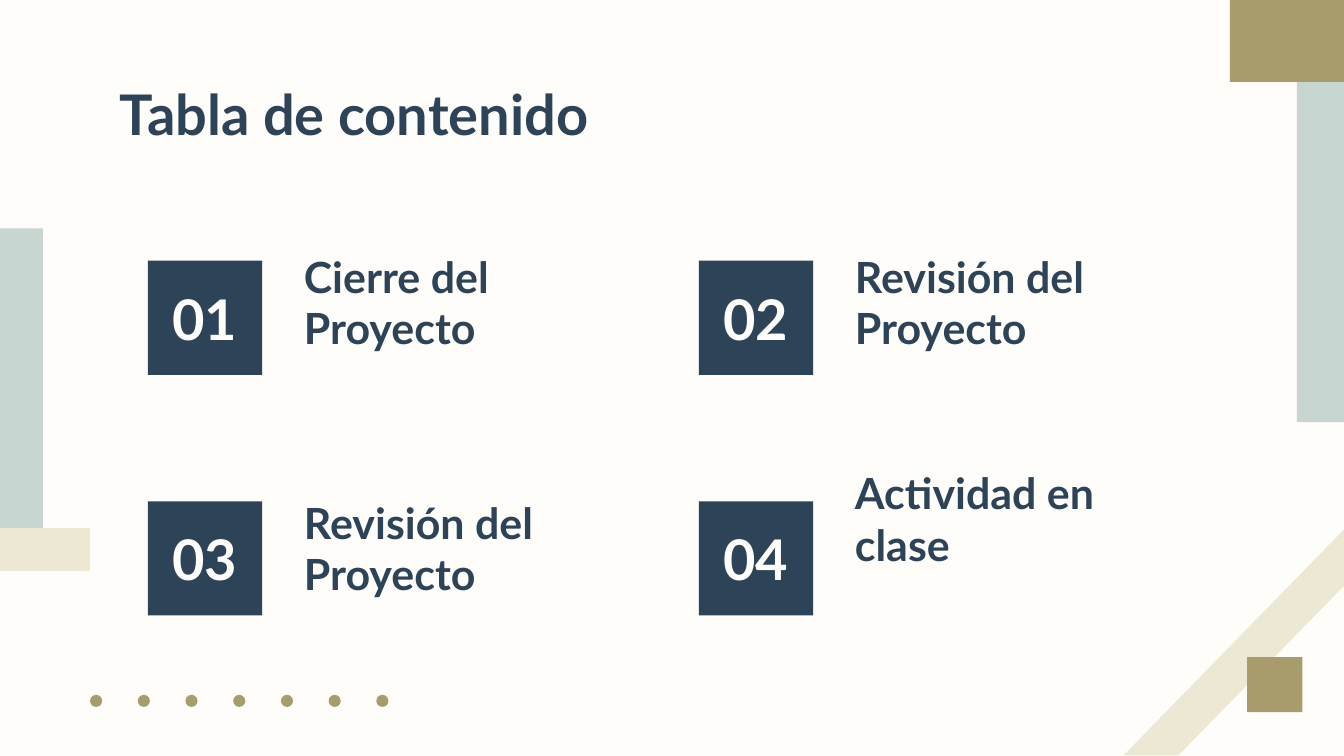
from dataclasses import dataclass

from pptx import Presentation
from pptx.dml.color import RGBColor
from pptx.enum.shapes import MSO_SHAPE
from pptx.enum.text import MSO_ANCHOR, MSO_AUTO_SIZE, PP_ALIGN
from pptx.util import Inches, Pt

RECTANGLE = MSO_SHAPE.RECTANGLE
OVAL = MSO_SHAPE.OVAL
RIGHT_TRIANGLE = MSO_SHAPE.RIGHT_TRIANGLE
TOP, MIDDLE, BOTTOM = MSO_ANCHOR.TOP, MSO_ANCHOR.MIDDLE, MSO_ANCHOR.BOTTOM
LEFT, CENTER = PP_ALIGN.LEFT, PP_ALIGN.CENTER
NO_AUTOFIT = MSO_AUTO_SIZE.NONE
TITLE_ONLY = 5

WIDTH = 10
HEIGHT = WIDTH * 9 / 16


@dataclass(frozen=True)
class Theme:
    paper: str = "FFFDFA"
    navy: str = "2C4358"
    gold: str = "A89C6C"
    sand: str = "ECE8D4"
    mist: str = "C7D6D1"
    font: str = "Lato"
    heading_size: int = 30
    label_size: int = 23
    inset: float = 0.1


THEME = Theme()

# Number, label, and how far the label's box sits above its tile
TOPICS = [
    ("01", "Cierre del Proyecto", 0.06),
    ("02", "Revisión del Proyecto", 0.06),
    ("03", "Revisión del Proyecto", 0.02),
    ("04", "Actividad en clase", 0.24),
]


def place(item, box):
    item.left, item.top, item.width, item.height = (Inches(n) for n in box)


def add_block(shapes, kind, box, color, rotation=0):
    block = shapes.add_shape(kind, *(Inches(n) for n in box))
    block.shadow.inherit = False
    block.fill.solid()
    block.fill.fore_color.rgb = RGBColor.from_string(color)
    block.line.fill.background()
    block.rotation = rotation
    return block


def write(shape, text, size, color, anchor, align=LEFT):
    frame = shape.text_frame
    frame.text = text
    frame.word_wrap = True
    frame.auto_size = NO_AUTOFIT
    frame.vertical_anchor = anchor
    frame.margin_left = frame.margin_right = Inches(THEME.inset)
    frame.margin_top = frame.margin_bottom = Inches(THEME.inset)
    para = frame.paragraphs[0]
    para.alignment = align
    para.font.name = THEME.font
    para.font.size = Pt(size)
    para.font.bold = True
    para.font.color.rgb = RGBColor.from_string(color)


def add_dots(shapes, box, count=7):
    left, top, width, size = box
    step = (width - size) / (count - 1)
    group = shapes.add_group_shape()
    for index in range(count):
        add_block(group.shapes, OVAL,
                  (left + index * step, top, size, size), THEME.gold)


def add_decoration(shapes):
    """Diagonal band, side bars, dots and corner squares."""
    bar, corner_width, corner_height = 0.35, 0.85, 0.61
    add_block(shapes, RIGHT_TRIANGLE, (8.34, 3.95, 1.69, 1.65), THEME.sand, 270)
    add_block(shapes, RECTANGLE,
              (WIDTH - bar, corner_height, bar, 0.45 * HEIGHT), THEME.mist)
    add_block(shapes, RECTANGLE, (0, 1.7, 0.32, 2.23), THEME.mist)
    add_block(shapes, RECTANGLE, (0, 3.93, 0.67, 0.32), THEME.sand)
    add_dots(shapes, (0.67, 5.17, 2.22, 0.09))
    add_block(shapes, RIGHT_TRIANGLE, (8.75, 4.36, 1.28, 1.25), THEME.paper, 270)
    add_block(shapes, RECTANGLE, (9.28, 4.89, 0.41, 0.41), THEME.gold)
    add_block(shapes, RECTANGLE,
              (WIDTH - corner_width, 0, corner_width, corner_height), THEME.gold)


def add_topic(shapes, box, number, label, rise):
    left, top, width, tile_size = box
    tile = add_block(shapes, RECTANGLE, (left, top, tile_size, tile_size), THEME.navy)
    write(tile, number, THEME.heading_size, THEME.paper, MIDDLE, CENTER)

    label_left = tile_size * 1.25
    label_box = (left + label_left, top - rise, width - label_left, tile_size)
    text_box = shapes.add_textbox(*(Inches(n) for n in label_box))
    write(text_box, label, THEME.label_size, THEME.navy, BOTTOM)


def add_topics(shapes, box, columns=2, tile_size=0.85, gap=0.4):
    left, top, width, height = box
    column_step = (width + gap) / columns
    row_step = height - tile_size
    for index, (number, label, rise) in enumerate(TOPICS):
        row, column = divmod(index, columns)
        cell = (left + column * column_step, top + row * row_step,
                column_step - gap, tile_size)
        add_topic(shapes, cell, number, label, rise)


def build_contents_page(deck):
    page = deck.slides.add_slide(deck.slide_layouts[TITLE_ONLY])
    page.background.fill.solid()
    page.background.fill.fore_color.rgb = RGBColor.from_string(THEME.paper)
    add_decoration(page.shapes)
    title = page.shapes.title
    place(title, (0.79, 0.49, 8.43, 0.63))
    write(title, "Tabla de contenido", THEME.heading_size, THEME.navy, TOP)
    add_topics(page.shapes, (1.1, 1.94, 7.8, 2.64))


def main():
    deck = Presentation()
    deck.slide_width, deck.slide_height = Inches(WIDTH), Inches(HEIGHT)
    build_contents_page(deck)
    deck.save("out.pptx")


if __name__ == "__main__":
    main()
